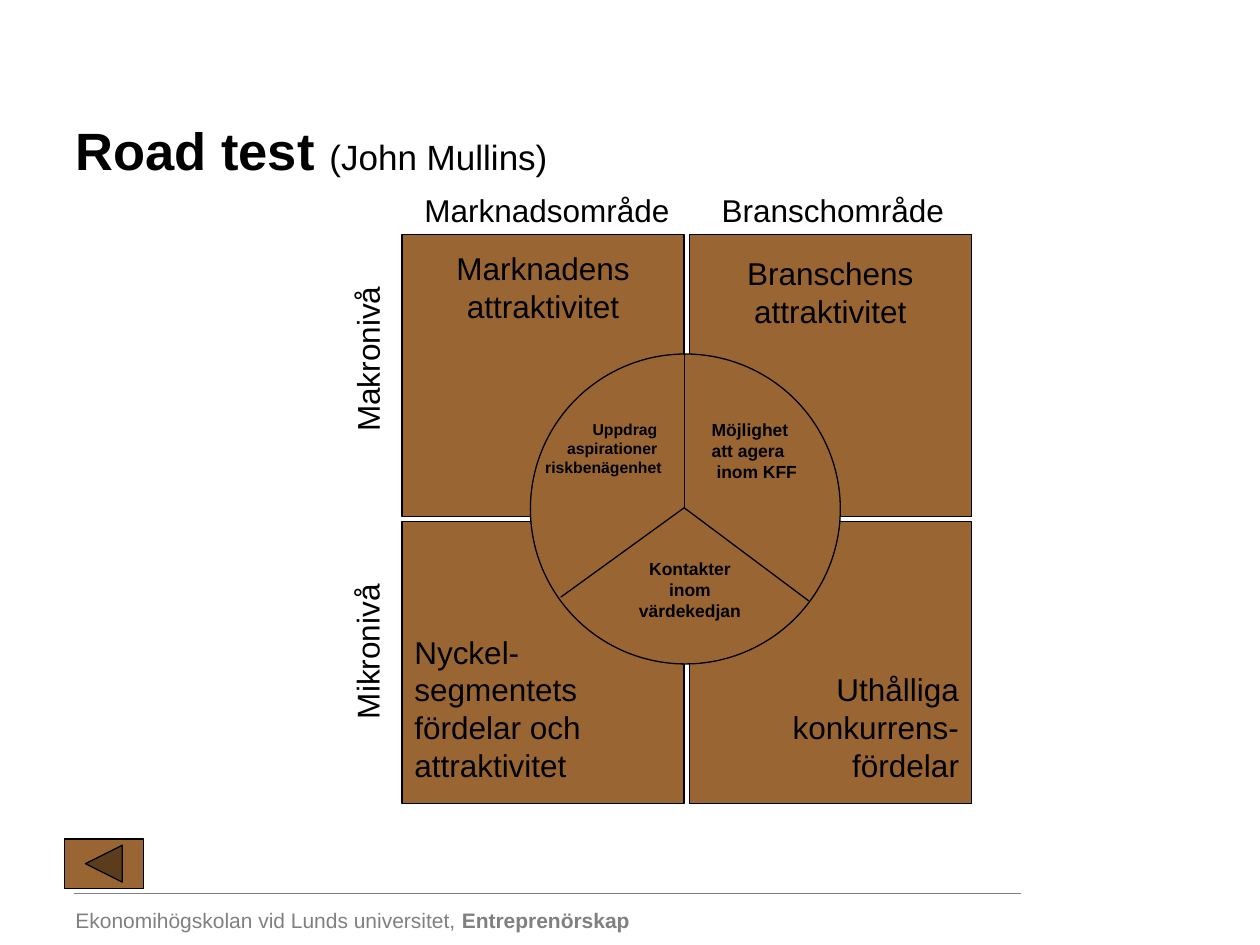
"""Build the road test slide: a two-by-two market matrix with a three-part circle."""
from lxml import etree
from pptx import Presentation
from pptx.dml.color import RGBColor
from pptx.enum.shapes import MSO_CONNECTOR, MSO_SHAPE
from pptx.enum.text import MSO_ANCHOR as ANCHOR, PP_ALIGN as ALIGN
from pptx.oxml.ns import qn
from pptx.util import Inches, Pt

BLACK = RGBColor(0x00, 0x00, 0x00)
BROWN = RGBColor(0x99, 0x66, 0x33)
GREY = RGBColor(0x80, 0x80, 0x80)


def write(shape, paragraphs, size, align=ALIGN.LEFT, bold=False, color=BLACK, wrap=False):
    """Fill a shape with paragraphs, each a list of runs that alternate in weight."""
    frame = shape.text_frame
    frame.word_wrap = wrap
    for index, text in enumerate(paragraphs):
        para = frame.paragraphs[0] if index == 0 else frame.add_paragraph()
        para.text = text
        para.alignment = align
        for span in para.runs:
            span.font.name = "Arial"
            span.font.size = Pt(size)
            span.font.bold = bold
            span.font.color.rgb = color


def draw_line(x1, y1, x2, y2, color=BLACK, width=0.75):
    """Draw a straight line without a shadow."""
    line = slide.shapes.add_connector(
        MSO_CONNECTOR.STRAIGHT, Inches(x1), Inches(y1), Inches(x2), Inches(y2))
    line.line.color.rgb = color
    line.line.width = Pt(width)
    etree.SubElement(line._element.spPr, qn("a:effectLst"))


deck = Presentation()
deck.slide_width, deck.slide_height = Inches(10), Inches(7.5)
slide = deck.slides.add_slide(deck.slide_layouts[5])

footer = slide.shapes.add_textbox(Inches(0.5), Inches(7.15), Inches(4.71), Inches(0.3))
write(footer, ["Ekonomihögskolan vid Lunds universitet, "], 12, color=GREY)
department = footer.text_frame.paragraphs[0].add_run()
department.text = "Entreprenörskap"
department.font.name = "Arial"
department.font.size = Pt(12)
department.font.bold = True
department.font.color.rgb = GREY
draw_line(0.59, 7.09, 8.1, 7.09, GREY, 0.5)

title = slide.shapes.title
title.left, title.top, title.width, title.height = Inches(0.5), Inches(0.56), Inches(9), Inches(1.25)
title.text_frame.vertical_anchor = ANCHOR.MIDDLE
write(title, ["Road test "], 30, bold=True, wrap=True)
author = title.text_frame.paragraphs[0].add_run()
author.text = "(John Mullins)"
author.font.name = "Arial"
author.font.size = Pt(20)
author.font.bold = False
author.font.color.rgb = BLACK

LEFT, TOP, SIDE, STEP = 3.19, 1.86, 2.24, 2.28
CENTER_X, CENTER_Y, RADIUS = 5.44, 4.04, 1.23
quadrants = [
    (0, 0, ["Marknadens\vattraktivitet"], ALIGN.CENTER, ANCHOR.TOP, 0.12, 0.05),
    (1, 1, ["Uthålliga\vkonkurrens-", "fördelar"], ALIGN.RIGHT, ANCHOR.BOTTOM, 0.05, 0.16),
    (1, 0, ["Branschens\vattraktivitet"], ALIGN.CENTER, ANCHOR.TOP, 0.16, 0.05),
    (0, 1, ["Nyckel-", "segmentets\vfördelar och\vattraktivitet"],
     ALIGN.LEFT, ANCHOR.BOTTOM, 0.05, 0.16),
]
boxes = [(MSO_SHAPE.ACTION_BUTTON_BACK_OR_PREVIOUS, 0.51, 6.66, 0.63, 0.39, None)]
boxes += [(MSO_SHAPE.RECTANGLE, LEFT + quadrant[0] * STEP, TOP + quadrant[1] * STEP, SIDE, SIDE, quadrant)
          for quadrant in quadrants]
boxes.append((MSO_SHAPE.OVAL, CENTER_X - RADIUS, CENTER_Y - RADIUS, 2 * RADIUS, 2 * RADIUS, None))
for kind, left, top, width, height, quadrant in boxes:
    box = slide.shapes.add_shape(kind, Inches(left), Inches(top), Inches(width), Inches(height))
    box.shadow.inherit = False
    box.fill.solid()
    box.fill.fore_color.rgb = BROWN
    box.line.color.rgb = BLACK
    box.line.width = Pt(0.75)
    if quadrant:
        column, row, paragraphs, align, anchor, inset_top, inset_bottom = quadrant
        write(box, paragraphs, 18, align, wrap=True)
        box.text_frame.vertical_anchor = anchor
        box.text_frame.margin_top = Inches(inset_top)
        box.text_frame.margin_bottom = Inches(inset_bottom)

for x, y in [(5.43, 2.81), (4.45, 4.74), (6.42, 4.77)]:
    draw_line(5.43, 4.03, x, y)

labels = [
    ("Makronivå", 2.24, 2.65, 1.35, 0.4, 270, 18, ALIGN.LEFT),
    ("Mikronivå", 2.28, 4.97, 1.27, 0.4, 270, 18, ALIGN.LEFT),
    ("Marknadsområde", 3.27, 1.47, 2.15, 0.4, 0, 18, ALIGN.LEFT),
    ("Branschområde", 5.63, 1.47, 1.97, 0.4, 0, 18, ALIGN.LEFT),
    ("Kontakter\vinom\vvärdekedjan", 4.97, 4.38, 1.01, 0.6, 0, 10, ALIGN.CENTER),
    ("Möjlighet\vatt agera\v inom KFF", 5.55, 3.28, 0.88, 0.6, 0, 10, ALIGN.LEFT),
    ("Uppdrag \vaspirationer \vriskbenägenhet", 4.21, 3.28, 1.14, 0.55, 0, 9, ALIGN.RIGHT),
]
for text, left, top, width, height, rotation, size, align in labels:
    label = slide.shapes.add_textbox(Inches(left), Inches(top), Inches(width), Inches(height))
    label.rotation = rotation
    write(label, [text], size, align, bold=size < 18)

deck.save("out.pptx")
